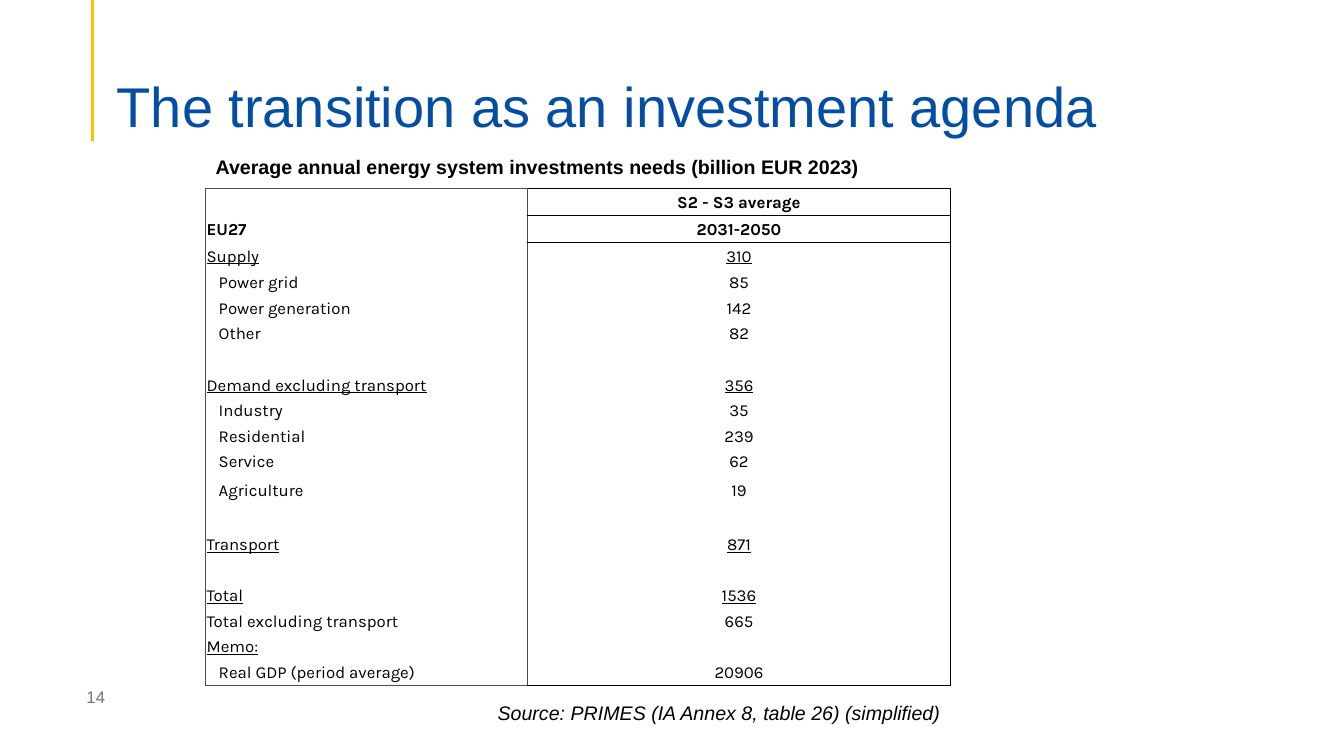
from lxml.etree import SubElement
from pptx import Presentation
from pptx.dml.color import RGBColor
from pptx.enum.shapes import MSO_CONNECTOR
from pptx.enum.text import MSO_ANCHOR, PP_ALIGN
from pptx.oxml.ns import qn
from pptx.util import Emu, Pt

PX = 3048
BLUE = RGBColor(0x03, 0x4E, 0xA2)
YELLOW = RGBColor(0xFF, 0xC0, 0x00)
GREY = RGBColor(0x76, 0x76, 0x76)
DARK_GREY = RGBColor(0x4D, 0x4D, 0x4D)
BLACK = RGBColor(0, 0, 0)

HEADING, GROUP, ITEM, PLAIN, MEMO = "heading", "group", "item", "plain", "memo"
INVESTMENTS = [
    (HEADING, "", "S2 - S3 average"),
    (HEADING, "EU27", "2031-2050"),
    (GROUP, "Supply", "310"),
    (ITEM, "Power grid", "85"),
    (ITEM, "Power generation", "142"),
    (ITEM, "Other", "82"),
    (PLAIN, "", ""),
    (GROUP, "Demand excluding transport", "356"),
    (ITEM, "Industry", "35"),
    (ITEM, "Residential", "239"),
    (ITEM, "Service", "62"),
    (ITEM, "Agriculture", "19"),
    (PLAIN, "", ""),
    (GROUP, "Transport", "871"),
    (PLAIN, "", ""),
    (GROUP, "Total", "1536"),
    (PLAIN, "Total excluding transport", "665"),
    (MEMO, "Memo:", ""),
    (ITEM, "Real GDP (period average)", "20906"),
]
ROW_HEIGHT = 76
SPECIAL_ROW_HEIGHTS = {0: 81, 1: 81, 2: 81, 11: 96, 18: 78}


def px(length):
    """Turn a length in px into EMU."""
    return Emu(length * PX)


def add_run(paragraph, wording, size, color, face="Arial"):
    """Add a styled run and return its font."""
    run = paragraph.add_run()
    run.text = wording
    font = run.font
    font.name, font.size = face, Pt(size)
    font.color.rgb = color
    return font


def add_label(slide, box, wording, size, color, anchor=MSO_ANCHOR.TOP,
              align=PP_ALIGN.LEFT):
    """Place one line of text in a box and return its frame and font."""
    frame = slide.shapes.add_textbox(*map(px, box)).text_frame
    frame.word_wrap = True
    frame.vertical_anchor = anchor
    paragraph = frame.paragraphs[0]
    paragraph.alignment = align
    return frame, add_run(paragraph, wording, size, color)


def add_heading(slide, box):
    """Draw the title with the accent rule hanging from the slide's top."""
    left, top, width, height = box
    rule_x = left - 42
    rule = slide.shapes.add_connector(
        MSO_CONNECTOR.STRAIGHT, px(rule_x), 0, px(rule_x), px(top + height + 3))
    rule.line.color.rgb = YELLOW
    rule.line.width = Pt(2.25)
    SubElement(rule._element.spPr, qn("a:effectLst"))
    frame, _ = add_label(slide, box, "The transition as an investment agenda",
                         40, BLUE, MSO_ANCHOR.BOTTOM)
    frame.margin_bottom = 0
    frame.paragraphs[0].line_spacing = 0.9


def set_borders(cell, borders):
    """Draw the given sides of a cell and clear the others."""
    properties = cell._tc.get_or_add_tcPr()
    for side in "LRTB":
        edge = SubElement(properties, qn(f"a:ln{side}"), w=str(Pt(1)))
        if side in borders:
            fill = SubElement(edge, qn("a:solidFill"))
            SubElement(fill, qn("a:srgbClr"), val=str(borders[side]))
        else:
            SubElement(edge, qn("a:noFill"))


def fill_cell(cell, wording, kind, align, indent):
    """Write one table cell in the style of its row."""
    cell.fill.background()
    cell.vertical_anchor = MSO_ANCHOR.MIDDLE
    cell.margin_left = px(3 + indent)
    cell.margin_right = cell.margin_top = px(3)
    cell.margin_bottom = 0
    paragraph = cell.text_frame.paragraphs[0]
    paragraph.alignment = align
    if wording:
        font = add_run(paragraph, wording, 12, BLACK, "Karla")
        font.bold = kind == HEADING
        font.underline = kind in (GROUP, MEMO)
    else:
        SubElement(paragraph._p, qn("a:endParaRPr"), sz="1200")


def add_investment_table(slide, box):
    """Build the table of investment needs in its box."""
    left, top, width, height = box
    last = len(INVESTMENTS) - 1
    table = slide.shapes.add_table(
        len(INVESTMENTS), 2, *map(px, box)).table
    table.first_row = table.horz_banding = False
    label_width = 958
    table.columns[0].width = px(label_width)
    table.columns[1].width = px(width - label_width)
    for index, (kind, label, amount) in enumerate(INVESTMENTS):
        table.rows[index].height = px(SPECIAL_ROW_HEIGHTS.get(index, ROW_HEIGHT))
        label_borders = {"L": DARK_GREY, "R": DARK_GREY}
        amount_borders = {"L": DARK_GREY, "R": BLACK}
        if index == 0:
            label_borders["T"] = DARK_GREY
        if index <= 2:
            amount_borders["T"] = BLACK
        if index == last:
            label_borders["B"] = DARK_GREY
        if index in (0, 1, last):
            amount_borders["B"] = BLACK
        indent = 36 if kind == ITEM else 0
        label_cell, amount_cell = table.cell(index, 0), table.cell(index, 1)
        set_borders(label_cell, label_borders)
        set_borders(amount_cell, amount_borders)
        fill_cell(label_cell, label, kind, PP_ALIGN.JUSTIFY, indent)
        fill_cell(amount_cell, amount, kind, PP_ALIGN.CENTER, 0)


def add_investment_panel(slide, box):
    """Place the caption, table and source line in one panel."""
    left, top, width, height = box
    _, caption = add_label(
        slide, (left, top, 2136, 102),
        "Average annual energy system investments needs (billion EUR 2023)",
        14, BLACK)
    caption.bold = True
    add_investment_table(slide, (left, top + 114, width, 1481))
    source_width = 1467
    _, source = add_label(
        slide, (left + width - source_width, top + height - 102, source_width, 102),
        "Source: PRIMES (IA Annex 8, table 26) (simplified)",
        14, BLACK, align=PP_ALIGN.RIGHT)
    source.italic = True


def main():
    """Build and save the slide."""
    deck = Presentation()
    deck.slide_width, deck.slide_height = px(4000), px(2250)
    slide = deck.slides.add_slide(deck.slide_layouts[6])
    add_heading(slide, (318, 159, 3450, 258))
    add_label(slide, (228, 2013, 900, 120), "14", 12, GREY, MSO_ANCHOR.MIDDLE)
    add_investment_panel(slide, (612, 447, 2217, 1725))
    deck.save("out.pptx")


if __name__ == "__main__":
    main()
